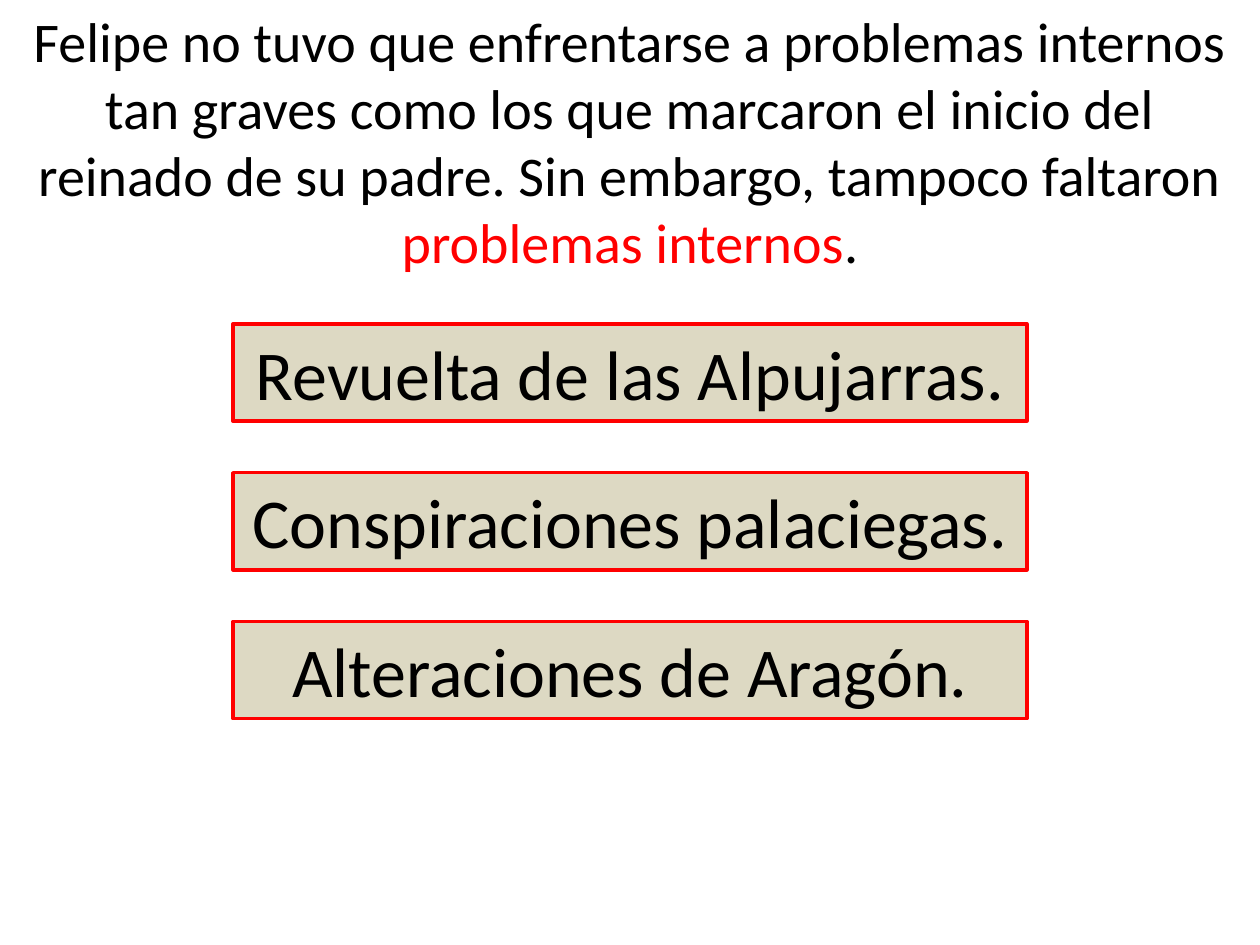
"""Build a slide on the internal problems of Felipe's reign."""
import dataclasses

import pptx
import pptx.dml.color
import pptx.enum.shapes
import pptx.enum.text
import pptx.shapes.autoshape
import pptx.slide
import pptx.text.text
import pptx.util

Cm = pptx.util.Cm
COLORS = {"text": "000000", "accent": "FF0000", "fill": "DDD9C3"}
FONT = "Calibri"


@dataclasses.dataclass
class Box:
    text: str
    top: float
    left: float = 4.7
    width: float = 16
    height: float = 1.96


def color(name: str) -> pptx.dml.color.RGBColor:
    return pptx.dml.color.RGBColor.from_string(COLORS[name])


def format_line(line: pptx.text.text._Paragraph, size: int) -> None:
    line.alignment = pptx.enum.text.PP_ALIGN.CENTER
    line.font.name = FONT
    line.font.size = pptx.util.Pt(size)
    line.font.color.rgb = color("text")


def draw_intro(slide: pptx.slide.Slide, parts: list[tuple[str, str]]) -> None:
    frame = slide.shapes.add_textbox(0, 0, Cm(25.4), Cm(5.74)).text_frame
    frame.word_wrap = True
    frame.auto_size = pptx.enum.text.MSO_AUTO_SIZE.SHAPE_TO_FIT_TEXT
    line = frame.paragraphs[0]
    format_line(line, 32)
    for text, name in parts:
        run = line.add_run()
        run.text = text
        run.font.color.rgb = color(name)


def draw_box(slide: pptx.slide.Slide, box: Box) -> pptx.shapes.autoshape.Shape:
    shape = slide.shapes.add_shape(
        pptx.enum.shapes.MSO_SHAPE.RECTANGLE,
        Cm(box.left), Cm(box.top), Cm(box.width), Cm(box.height))
    shape.shadow.inherit = False
    shape.fill.solid()
    shape.fill.fore_color.rgb = color("fill")
    shape.line.color.rgb = color("accent")
    shape.line.width = pptx.util.Pt(2)
    frame = shape.text_frame
    frame.word_wrap = True
    frame.auto_size = pptx.enum.text.MSO_AUTO_SIZE.SHAPE_TO_FIT_TEXT
    frame.vertical_anchor = pptx.enum.text.MSO_ANCHOR.TOP
    frame.text = box.text
    format_line(frame.paragraphs[0], 40)
    return shape


def main() -> None:
    deck = pptx.Presentation()
    deck.slide_width, deck.slide_height = Cm(25.4), Cm(19.05)
    slide = deck.slides.add_slide(deck.slide_layouts[6])
    draw_intro(slide, [
        ("Felipe no tuvo que enfrentarse a problemas internos tan graves como "
         "los que marcaron el inicio del reinado de su padre. Sin embargo, "
         "tampoco faltaron ", "text"),
        ("problemas internos", "accent"),
        (".", "text"),
    ])
    crises = ["Revuelta de las Alpujarras.", "Conspiraciones palaciegas.",
              "Alteraciones de Aragón."]
    for row, text in enumerate(crises):
        draw_box(slide, Box(text, top=6.53 + 3 * row))
    deck.save("out.pptx")


if __name__ == "__main__":
    main()
